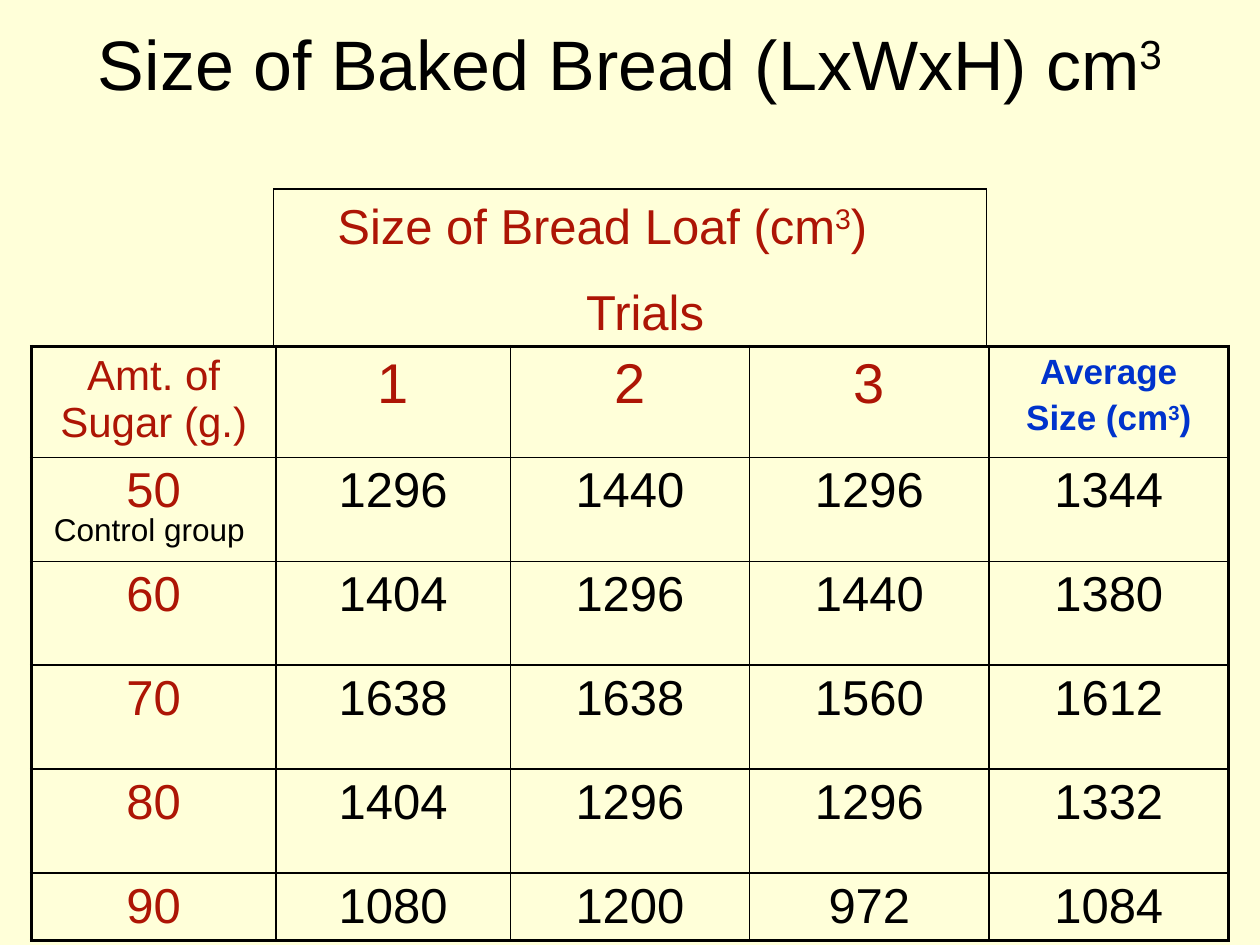
from lxml import etree
from pptx import Presentation, util as u
from pptx.dml import color
from pptx.enum import shapes, text
from pptx.oxml import ns

RED, BLUE, BLACK, CREAM = "AD1505", "0033CC", "000000", "FFFFD9"
COLUMNS = [1.94, 1.86, 1.9, 1.9, 1.9]
ROWS = [0.88] + [0.825] * 4 + [0.53]
HEADINGS = ["Amt. of Sugar (g.)", "1", "2", "3", "Average\nSize (cm^3^)"]
RESULTS = [
    [50, 1296, 1440, 1296, 1344],
    [60, 1404, 1296, 1440, 1380],
    [70, 1638, 1638, 1560, 1612],
    [80, 1404, 1296, 1296, 1332],
    [90, 1080, 1200, 972, 1084],
]


def rgb(value):
    """Turn a hex string into a colour."""
    return color.RGBColor.from_string(value)


def write(frame, wording, size, shade, bold=False, gap=0, aligns=("c",)):
    """Fill a frame line by line, raising the parts between carets."""
    for index, line in enumerate(wording.split("\n")):
        para = frame.paragraphs[0] if index == 0 else frame.add_paragraph()
        centred = aligns[index % len(aligns)] == "c"
        para.alignment = text.PP_ALIGN.CENTER if centred else text.PP_ALIGN.LEFT
        para.space_before = u.Pt(gap if index else 0)
        for part, words in enumerate(line.split("^")):
            span = para.add_run()
            span.text = words
            span.font.name, span.font.size, span.font.bold = "Arial", u.Pt(size), bold
            span.font.color.rgb = rgb(shade)
            if part % 2:
                span.font._element.set("baseline", "30000")


def border(cell, widths):
    """Draw the four sides of a cell in black, widths in points."""
    props = cell._tc.get_or_add_tcPr()
    for index, (side, width) in enumerate(widths.items()):
        line = etree.Element(ns.qn("a:" + side), w=str(u.Pt(width)))
        fill = etree.SubElement(line, ns.qn("a:solidFill"))
        etree.SubElement(fill, ns.qn("a:srgbClr"), val=BLACK)
        props.insert(index, line)


def add_title(page, left, top, width, height):
    """Place the slide title."""
    box = page.shapes.title
    box.left, box.top, box.width, box.height = map(u.Inches, (left, top, width, height))
    box.text_frame.auto_size = text.MSO_AUTO_SIZE.NONE
    box.text_frame.vertical_anchor = text.MSO_ANCHOR.MIDDLE
    write(box.text_frame, "Size of Baked Bread (LxWxH) cm^3^", 40, BLACK)


def add_label(page, left, top, width, height, *args, **options):
    """Place a free text box."""
    box = page.shapes.add_textbox(*map(u.Inches, (left, top, width, height)))
    box.text_frame.word_wrap = True
    write(box.text_frame, *args, **options)


def add_results(page, left, top):
    """Place the table of loaf sizes."""
    size = map(u.Inches, (left, top, sum(COLUMNS), sum(ROWS)))
    table = page.shapes.add_table(len(ROWS), len(COLUMNS), *size).table
    table.first_row = table.horz_banding = False
    for column, width in zip(table.columns, COLUMNS):
        column.width = u.Inches(width)
    for row, height in zip(table.rows, ROWS):
        row.height = u.Inches(height)
    last_row, last_column = len(ROWS) - 1, len(COLUMNS) - 1
    for r, values in enumerate([HEADINGS] + RESULTS):
        for c, value in enumerate(values):
            cell = table.cell(r, c)
            cell.fill.background()
            heading_size = {0: 24, last_column: 20}.get(c, 32)
            average = r == 0 and c == last_column
            shade = BLUE if average else RED if r == 0 or c == 0 else BLACK
            write(cell.text_frame, str(value), 28 if r else heading_size, shade, average, 4)
            outer = {"lnL": c == 0, "lnR": c == last_column, "lnT": r == 0, "lnB": r == last_row}
            border(cell, {side: 2.25 if edge else 1 for side, edge in outer.items()})


def add_bracket(page, left, top, right, bottom):
    """Draw the open frame over the trial columns."""
    corners = [(left, bottom), (left, top), (right, top), (right, bottom)]
    for start, end in zip(corners, corners[1:]):
        line = page.shapes.add_connector(
            shapes.MSO_CONNECTOR.STRAIGHT, *map(u.Inches, start + end))
        line.line.color.rgb = rgb(BLACK)
        line.line.width = u.Pt(0.75)
        etree.SubElement(line._element.spPr, ns.qn("a:effectLst"))


def main():
    """Build and save the slide."""
    deck = Presentation()
    deck.slide_width, deck.slide_height = u.Inches(10), u.Inches(7.5)
    page = deck.slides.add_slide(deck.slide_layouts[5])
    page.background.fill.solid()
    page.background.fill.fore_color.rgb = rgb(CREAM)
    add_title(page, 0.5, 0, 9, 1)
    add_results(page, 0.25, 2.75)
    add_bracket(page, 2.17, 1.5, 7.83, 2.75)
    add_label(page, 2.58, 1.5, 5.08, 1.27, "Size of Bread Loaf (cm^3^)\nTrials",
              28, RED, gap=16, aligns=("l", "c"))
    add_label(page, 0.33, 4, 1.83, 0.4, "Control group", 18, BLACK, aligns=("l",))
    deck.save("out.pptx")


if __name__ == "__main__":
    main()
